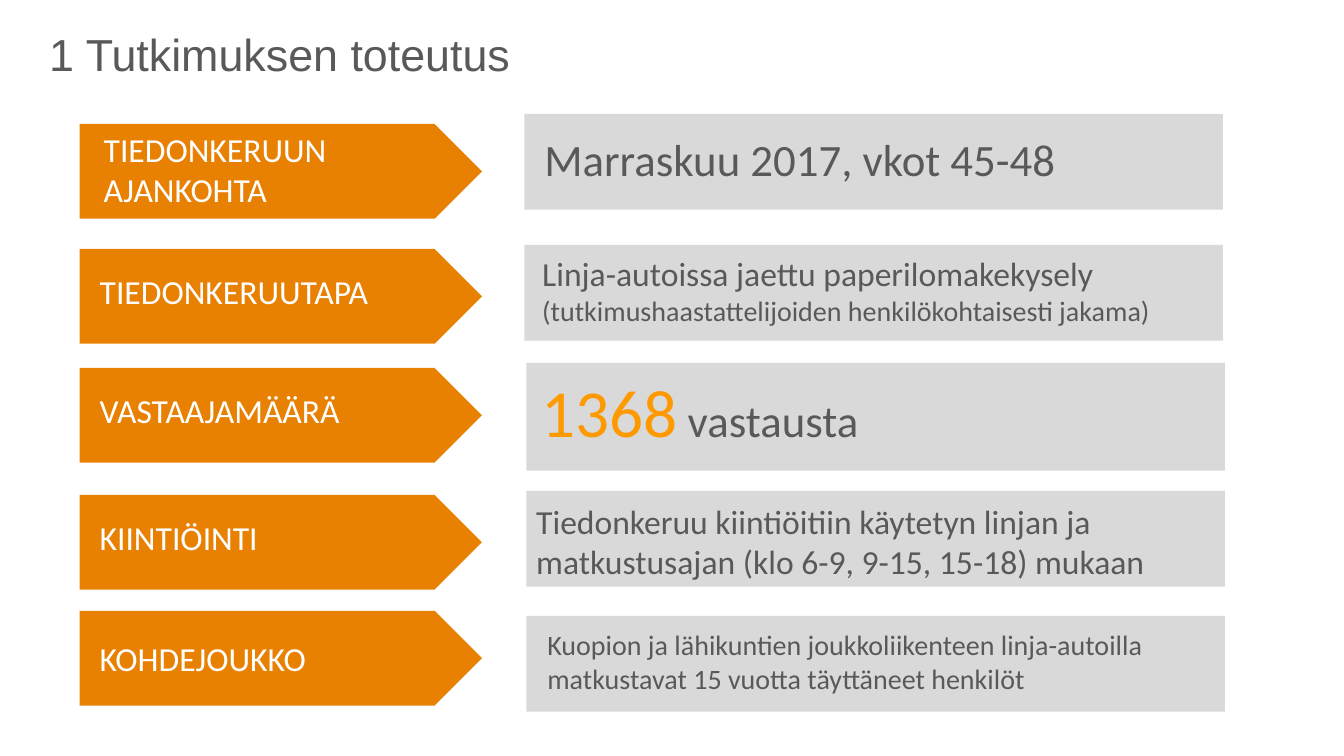
from pptx import Presentation
from pptx import util as u
from pptx.dml.color import RGBColor
from pptx.enum import shapes, text

ORANGE = RGBColor(0xE8, 0x80, 0x02)
AMBER = RGBColor(0xFF, 0x99, 0x00)
PANEL_GREY = RGBColor(0xD9, 0xD9, 0xD9)
TEXT_GREY = RGBColor(0x59, 0x59, 0x59)
WHITE = RGBColor(0xFF, 0xFF, 0xFF)


class SlideBuilder:
    """Holds the current slide and its body font."""

    def __init__(self, slide, font="Calibri"):
        self.slide = slide
        self.font = font

    def block(self, kind, left, top, width, height, fill):
        shape = self.slide.shapes.add_shape(
            kind, *map(u.Inches, (left, top, width, height)))
        shape.shadow.inherit = False
        shape.fill.solid()
        shape.fill.fore_color.rgb = fill
        shape.line.fill.background()

    def label(self, left, top, width, height, paragraphs, font=None,
              anchor=text.MSO_ANCHOR.TOP):
        """Each paragraph is a list of (wording, size, colour) runs."""
        box = self.slide.shapes.add_textbox(
            *map(u.Inches, (left, top, width, height)))
        frame = box.text_frame
        frame.word_wrap = True
        frame.vertical_anchor = anchor
        for index, runs in enumerate(paragraphs):
            para = frame.add_paragraph() if index else frame.paragraphs[0]
            for wording, size, colour in runs:
                span = para.add_run()
                span.text = wording
                span.font.name = font or self.font
                span.font.size = u.Pt(size)
                span.font.color.rgb = colour


# Panel: left, top, height. Arrow: top.
# Heading: left, top, width, height, lines. Detail: left, top, width, height, paragraphs.
ROWS = [
    ((5.2, 1.13, 0.95), 1.23,
     (0.93, 1.23, 3.04, 0.91, ["TIEDONKERUUN", "AJANKOHTA"]),
     (5.3, 1.26, 6.28, 0.64, [[("Marraskuu 2017, vkot 45-48", 32, TEXT_GREY)]])),
    ((5.2, 2.43, 0.95), 2.47,
     (0.89, 2.64, 3.04, 0.5, ["TIEDONKERUUTAPA"]),
     (5.28, 2.46, 6.84, 0.84, [
         [("Linja-autoissa jaettu paperilomakekysely", 24, TEXT_GREY)],
         [("(tutkimushaastattelijoiden henkilökohtaisesti jakama)", 20, TEXT_GREY)]])),
    ((5.22, 3.6, 1.07), 3.65,
     (0.89, 3.82, 3.3, 0.5, ["VASTAAJAMÄÄRÄ"]),
     (5.27, 3.62, 6.82, 0.91, [
         [("1368", 48, AMBER), (" vastausta", 32, TEXT_GREY)]])),
    ((5.22, 4.87, 0.95), 4.91,
     (0.89, 5.08, 3.3, 0.5, ["KIINTIÖINTI"]),
     (5.22, 4.92, 6.36, 0.91, [
         [("Tiedonkeruu kiintiöitiin käytetyn linjan ja matkustusajan "
           "(klo 6-9, 9-15, 15-18) mukaan", 24, TEXT_GREY)]])),
    ((5.22, 6.11, 0.95), 6.06,
     (0.89, 6.28, 3.3, 0.5, ["KOHDEJOUKKO"]),
     (5.33, 6.18, 6.79, 0.77, [
         [("Kuopion ja lähikuntien joukkoliikenteen linja-autoilla "
           "matkustavat 15 vuotta täyttäneet henkilöt", 20, TEXT_GREY)]])),
]


def main():
    deck = Presentation()
    deck.slide_width, deck.slide_height = u.Inches(13.33), u.Inches(7.5)
    page = SlideBuilder(deck.slides.add_slide(deck.slide_layouts[6]))

    # Title
    page.label(0.39, 0.26, 10.73, 0.54,
               [[("1 Tutkimuksen toteutus", 32, TEXT_GREY)]],
               font="Arial", anchor=text.MSO_ANCHOR.MIDDLE)

    # Rows: grey panel, orange arrow, heading and detail
    for (left, top, height), arrow_top, heading, detail in ROWS:
        page.block(shapes.MSO_SHAPE.RECTANGLE, left, top, 6.93, height, PANEL_GREY)
        page.block(shapes.MSO_SHAPE.PENTAGON, 0.79, arrow_top, 3.99, 0.94, ORANGE)
        *place, lines = heading
        page.label(*place, [[(line, 24, WHITE)] for line in lines])
        page.label(*detail)

    deck.save("out.pptx")


if __name__ == "__main__":
    main()
